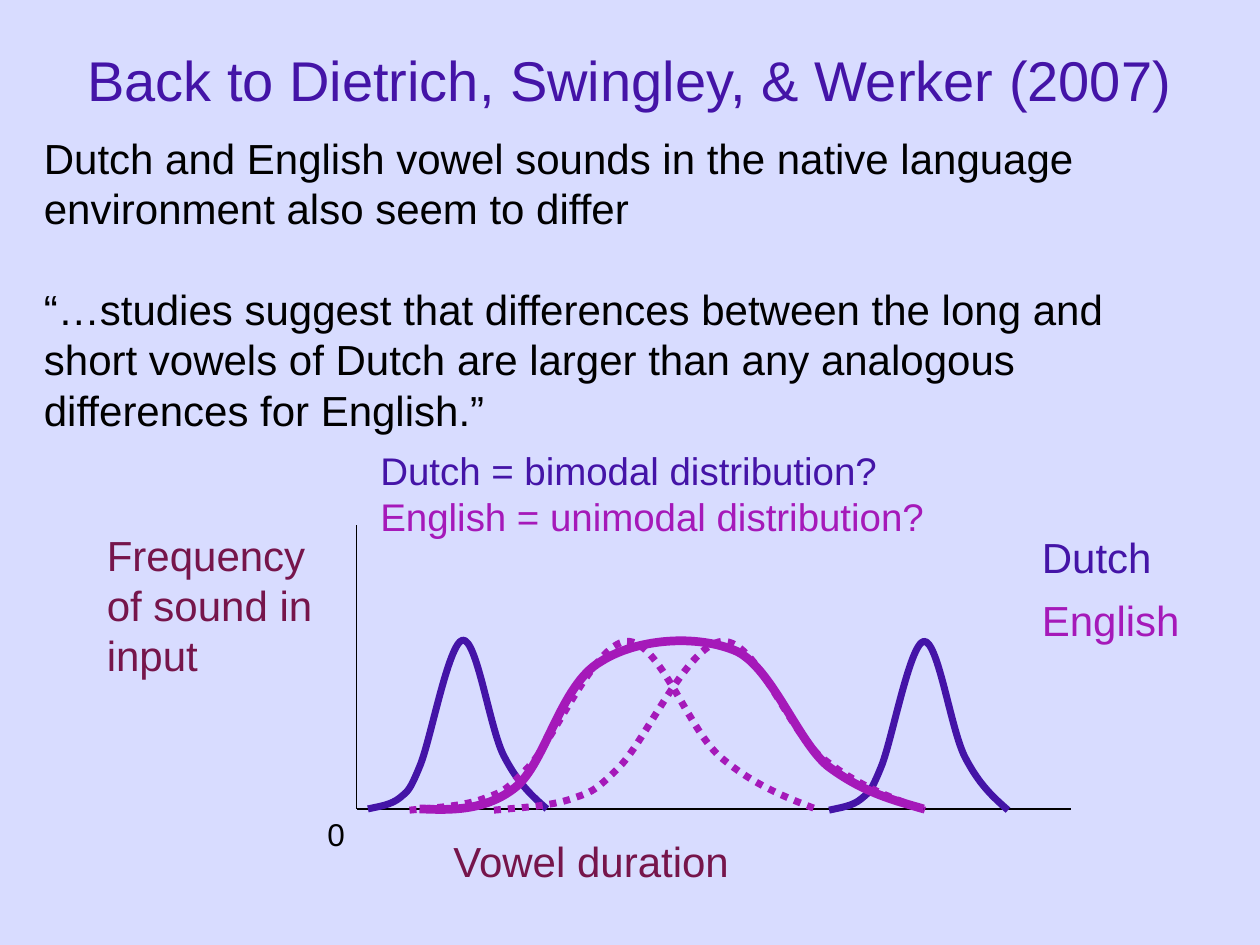
from dataclasses import dataclass

from lxml.etree import SubElement
from pptx import Presentation
from pptx.dml.color import RGBColor as Color
from pptx.enum.dml import MSO_LINE as Dash
from pptx.enum.shapes import MSO_CONNECTOR as Connector
from pptx.enum.text import MSO_ANCHOR as Anchor, PP_ALIGN as Align
from pptx.oxml.ns import qn
from pptx.util import Inches, Pt


@dataclass(frozen=True)
class Theme:
    font: str = "Arial"
    background: str = "D8DCFF"
    ink: str = "000000"
    dutch: str = "4414A7"
    english: str = "A519B9"
    label: str = "76154B"
    title_size: float = 32
    body_size: float = 24
    question_size: float = 22
    tick_size: float = 18
    axis_width: float = 0.75
    curve_width: float = 4
    sum_width: float = 5


BELL = [(0, 0), (0.06, 0.02), (0.13, 0.03), (0.18, 0.09),
        (0.22, 0.14), (0.23, 0.13), (0.29, 0.34),
        (0.35, 0.54), (0.45, 1.32), (0.53, 1.34),
        (0.61, 1.35), (0.68, 0.64), (0.76, 0.42),
        (0.84, 0.2), (0.92, 0.1), (1, 0)]
PLATEAU = [(0, 0), (0.06, -0.01), (0.13, -0.02), (0.19, 0.17),
           (0.25, 0.36), (0.28, 0.99), (0.36, 1.17),
           (0.43, 1.35), (0.55, 1.39), (0.63, 1.25),
           (0.7, 1.11), (0.75, 0.54), (0.81, 0.34),
           (0.88, 0.13), (0.94, 0.07), (1, 0)]


class SlideBuilder:
    """Draws styled elements on the current slide."""

    def __init__(self, slide, theme):
        self.slide = slide
        self.theme = theme
        fill = slide.background.fill
        fill.solid()
        fill.fore_color.rgb = Color.from_string(theme.background)

    def text(self, left, top, width, height, lines, size,
             align=Align.LEFT, anchor=Anchor.TOP, gap=0):
        box = self.slide.shapes.add_textbox(
            Inches(left), Inches(top), Inches(width), Inches(height))
        frame = box.text_frame
        frame.word_wrap = True
        frame.vertical_anchor = anchor
        for index, (words, color) in enumerate(lines):
            para = frame.add_paragraph() if index else frame.paragraphs[0]
            para.alignment = align
            if index and gap:
                para.space_before = Pt(gap)
            span = para.add_run()
            span.text = words
            span.font.name = self.theme.font
            span.font.size = Pt(size)
            span.font.color.rgb = Color.from_string(color)

    def axis(self, x1, y1, x2, y2):
        line = self.slide.shapes.add_connector(
            Connector.STRAIGHT, Inches(x1), Inches(y1), Inches(x2), Inches(y2))
        line.line.color.rgb = Color.from_string(self.theme.ink)
        line.line.width = Pt(self.theme.axis_width)
        SubElement(line._element.spPr, qn("a:effectLst"))

    def curve(self, left, base, width, controls, color, weight, dash=None):
        points = [(Inches(left + x * width), Inches(base - rise)) for x, rise in controls]
        builder = self.slide.shapes.build_freeform(*points[0])
        builder.add_line_segments(points[1:], close=False)
        shape = builder.convert_to_shape()
        self.bend(shape)
        shape.shadow.inherit = False
        shape.fill.background()
        shape.line.color.rgb = Color.from_string(color)
        shape.line.width = Pt(weight)
        if dash:
            shape.line.dash_style = dash

    def bend(self, shape):
        segments = list(shape._element.spPr.iter(qn("a:lnTo")))
        outline = segments[0].getparent()
        for first in range(0, len(segments), 3):
            cubic = SubElement(outline, qn("a:cubicBezTo"))
            for segment in segments[first:first + 3]:
                cubic.append(segment[0])
                outline.remove(segment)


def main():
    deck = Presentation()
    deck.slide_width, deck.slide_height = Inches(10), Inches(7.5)
    theme = Theme()
    page = SlideBuilder(deck.slides.add_slide(deck.slide_layouts[6]), theme)

    page.text(0, 0, 10, 1.25,
              [("Back to Dietrich, Swingley, & Werker (2007)", theme.dutch)],
              theme.title_size, Align.CENTER, Anchor.MIDDLE)
    page.text(0.25, 1, 9.08, 2.5, [
        ("Dutch and English vowel sounds in the native language "
         "environment also seem to differ", theme.ink),
        ("“…studies suggest that differences between the long and short vowels "
         "of Dutch are larger than any analogous differences for English.”", theme.ink),
    ], theme.body_size, gap=28.8)

    origin_x, origin_y = 2.83, 6.42
    page.axis(origin_x, 4.17, origin_x, origin_y)
    page.axis(origin_x, origin_y, 8.5, origin_y)

    for left, top, width, height, words, color, size in (
            (8.17, 4.17, 1.42, 0.5, "Dutch", theme.dutch, theme.body_size),
            (0.75, 4.15, 1.83, 1.7, "Frequency of sound in input", theme.label,
             theme.body_size),
            (3.5, 6.58, 2.83, 0.5, "Vowel duration", theme.label, theme.body_size),
            (2.5, 6.42, 0.42, 0.4, "0", theme.ink, theme.tick_size),
            (8.17, 4.67, 1.42, 0.5, "English", theme.english, theme.body_size)):
        page.text(left, top, width, height, [(words, color)], size)
    page.text(2.92, 3.5, 5.08, 0.83, [
        ("Dutch = bimodal distribution?", theme.dutch),
        ("English = unimodal distribution?", theme.english),
    ], theme.question_size)

    for left, base, width, color, dash in (
            (2.92, 6.42, 1.42, theme.dutch, None),
            (6.58, 6.43, 1.42, theme.dutch, None),
            (3.25, 6.43, 3.25, theme.english, Dash.ROUND_DOT),
            (3.92, 6.43, 3.42, theme.english, Dash.ROUND_DOT)):
        page.curve(left, base, width, BELL, color, theme.curve_width, dash)
    page.curve(3.33, origin_y, 4, PLATEAU, theme.english, theme.sum_width)

    deck.save("out.pptx")


if __name__ == "__main__":
    main()
